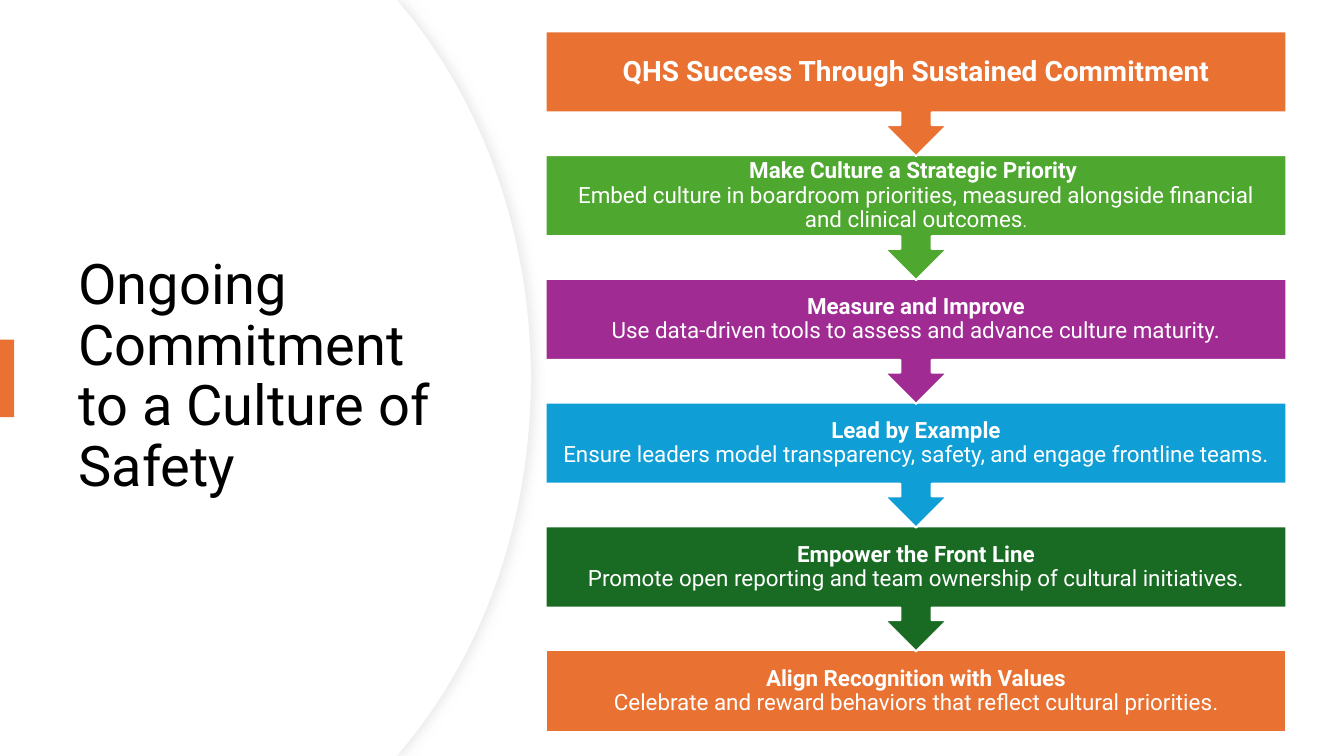
"""Build the slide on ongoing commitment to a culture of safety."""
from dataclasses import dataclass

from lxml import etree
from pptx import Presentation
from pptx.dml.color import RGBColor
from pptx.enum.shapes import MSO_SHAPE
from pptx.enum.text import MSO_ANCHOR, PP_ALIGN
from pptx.oxml.ns import qn
from pptx.util import Inches, Pt

RECT = MSO_SHAPE.RECTANGLE
CALLOUT = MSO_SHAPE.UP_ARROW_CALLOUT
MIDDLE = MSO_ANCHOR.MIDDLE
CENTER = PP_ALIGN.CENTER

FONT = "Roboto"
COLORS = {
    "white": "FFFFFF", "black": "000000", "edge": "EFEFEF", "shade": "D9D9D9",
    "orange": "E97132", "lime": "4EA72E", "purple": "A02B93",
    "blue": "0F9ED5", "green": "196B24",
}
LEFT, WIDTH, BODY, FULL = 5.41, 7.35, 0.81, 1.24
TOP, LAST = 0.31, 6.45


@dataclass
class Step:
    color: str
    head: str
    detail: str = ""
    size: int = 16
    inset: float = 0.12
    stop: int = 16


STEPS = [
    Step("orange", "QHS Success Through Sustained Commitment", size=20, inset=0.16),
    Step("lime", "Make Culture a Strategic Priority ",
         "Embed culture in boardroom priorities, measured alongside financial "
         "and clinical outcomes", stop=12),
    Step("purple", "Measure and Improve",
         "Use data-driven tools to assess and advance culture maturity"),
    Step("blue", "Lead by Example",
         "Ensure leaders model transparency, safety, and engage frontline teams"),
    Step("green", "Empower the Front Line",
         "Promote open reporting and team ownership of cultural initiatives"),
    Step("orange", "Align Recognition with Values",
         "Celebrate and reward behaviors that reflect cultural priorities", stop=15),
]


def tint(name: str) -> RGBColor:
    return RGBColor.from_string(COLORS[name])


def paint(shape, fill: str, line: str = "", width: float = 0) -> None:
    shape.shadow.inherit = False
    shape.fill.solid()
    shape.fill.fore_color.rgb = tint(fill)
    if line:
        shape.line.color.rgb = tint(line)
        shape.line.width = Pt(width)
    else:
        shape.line.fill.background()


def cast(shape) -> None:
    effects = shape._element.spPr.find(qn("a:effectLst"))
    shadow = etree.SubElement(effects, qn("a:outerShdw"), blurRad=str(Pt(7)),
                              dist=str(Pt(3)), dir="0", algn="l", rotWithShape="0")
    color = etree.SubElement(shadow, qn("a:srgbClr"), val=COLORS["shade"])
    etree.SubElement(color, qn("a:alpha"), val="50000")


def bend(lines: list) -> None:
    """Turn three straight segments into one cubic curve."""
    curve = etree.Element(qn("a:cubicBezTo"))
    lines[0].addprevious(curve)
    for line in lines:
        curve.append(line[0])
        line.getparent().remove(line)


def panel(slide, shift: float):
    upper = [(3.94, 0), (4.01 - shift, 0.08), (4.79 - shift, 1.02),
             (5.27 - shift, 2.32)]
    lower = [(x, 7.5 - y) for x, y in reversed(upper)]
    points = [*upper, (5.27 - shift, 3.75), *lower, (0, 7.5)]
    outline = slide.shapes.build_freeform(0, 0)
    outline.add_line_segments([(Inches(x), Inches(y)) for x, y in points], close=True)
    shape = outline.convert_to_shape()
    lines = list(shape._element.iter(qn("a:lnTo")))
    bend(lines[2:5])
    bend(lines[5:8])
    return shape


def label(slide, x: float, y: float, w: float, h: float, text: str):
    frame = slide.shapes.add_textbox(
        Inches(x), Inches(y), Inches(w), Inches(h)).text_frame
    frame.word_wrap = True
    frame.vertical_anchor = MIDDLE
    frame.text = text
    frame.paragraphs[0].line_spacing = 0.9
    return frame


def style(run, size: float, color: str, bold: bool = False) -> None:
    run.font.name = FONT
    run.font.size = Pt(size)
    run.font.bold = bold
    run.font.color.rgb = tint(color)


def draw(slide, step: Step, top: float, last: bool) -> None:
    kind, height = (RECT, BODY) if last else (CALLOUT, FULL)
    box = slide.shapes.add_shape(
        kind, Inches(LEFT), Inches(top), Inches(WIDTH), Inches(height))
    box.rotation = 0 if last else 180
    paint(box, step.color, "white", 1.5)

    text = f"{step.head}\v{step.detail}" if step.detail else step.head
    frame = label(slide, LEFT, top, WIDTH, BODY, text)
    frame.margin_left = frame.margin_right = Inches(step.inset)
    frame.margin_top = frame.margin_bottom = Inches(step.inset)
    para = frame.paragraphs[0]
    para.alignment = CENTER
    for i, run in enumerate(para.runs):
        style(run, step.size, "white", bold=i == 0)
    if step.detail:
        dot = para.add_run()
        dot.text = "."
        style(dot, step.stop, "white")


def main() -> None:
    deck = Presentation()
    deck.slide_width, deck.slide_height = Inches(13.33), Inches(7.5)
    slide = deck.slides.add_slide(deck.slide_layouts[6])

    back = panel(slide, 0)
    paint(back, "white", "edge", 0.75)
    cast(back)
    paint(panel(slide, 0.01), "white")

    title = label(slide, 0.68, 1.27, 3.94, 4.95,
                  "Ongoing Commitment to a Culture of Safety")
    style(title.paragraphs[0].runs[0], 40, "black")
    mark = slide.shapes.add_shape(
        RECT, 0, Inches(3.37), Inches(0.14), Inches(0.77))
    paint(mark, "orange")

    end = len(STEPS) - 1
    pitch = (LAST - TOP) / end
    for i, step in reversed(list(enumerate(STEPS))):
        draw(slide, step, TOP + i * pitch, i == end)
    deck.save("out.pptx")


if __name__ == "__main__":
    main()
